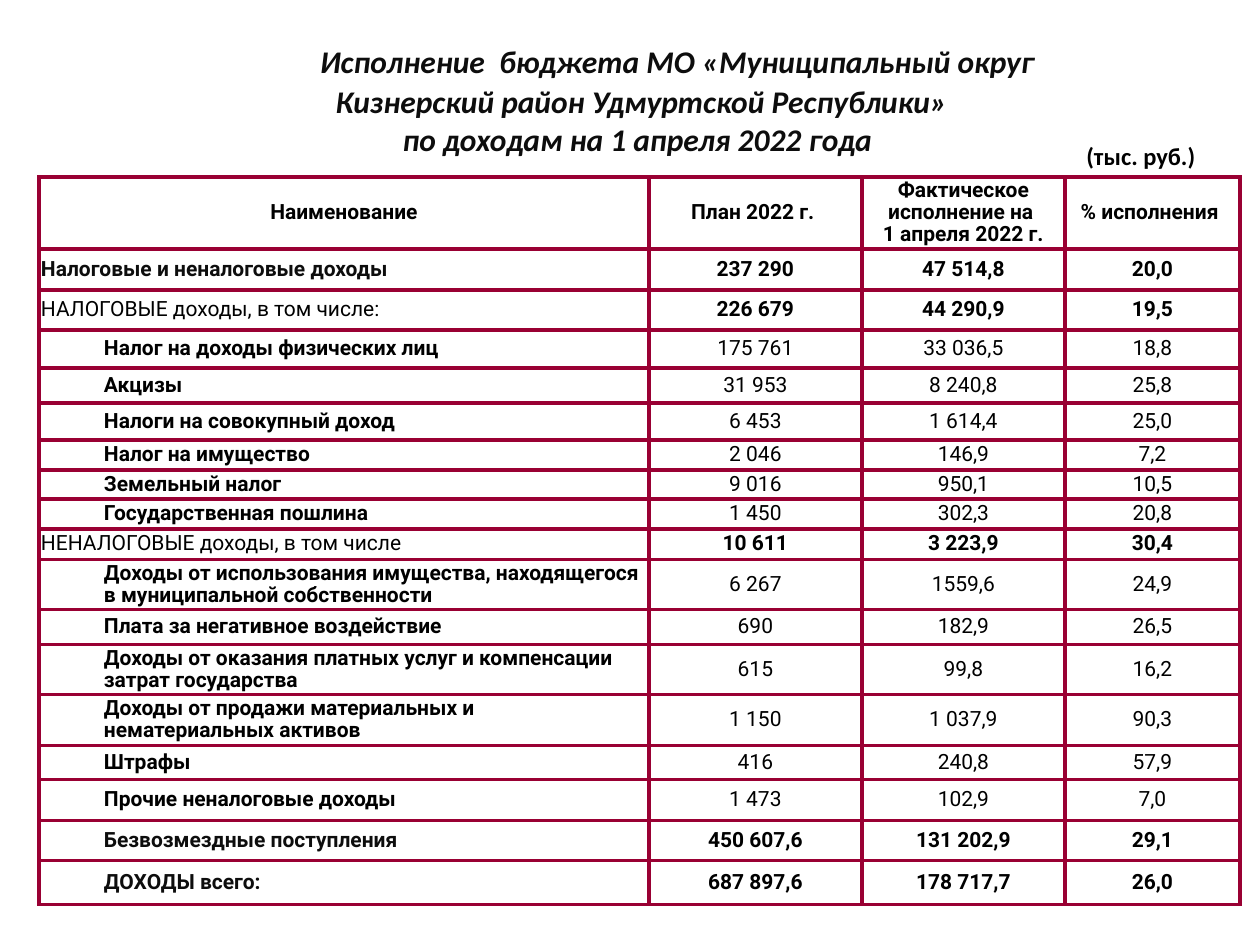
from dataclasses import dataclass

from lxml.etree import SubElement
from pptx import Presentation
from pptx.dml.color import RGBColor
from pptx.enum.text import MSO_ANCHOR as Anchor, MSO_AUTO_SIZE as AutoSize, PP_ALIGN as Align
from pptx.oxml.ns import qn
from pptx.util import Emu, Pt


@dataclass(frozen=True)
class Theme:
    ink: str = "000000"
    soft_ink: str = "0D0D0D"
    paper: str = "FFFFFF"
    border: str = "990033"
    title_font: str = "Calibri"
    table_font: str = "Roboto"
    title_size: int = 18
    unit_size: int = 14
    table_size: int = 12
    border_width: float = 2.25


theme = Theme()


def px(count):
    return Emu(round(count * 914400 / 126))


def add_span(para, text, font, size, color, bold=True, italic=False):
    span = para.add_run()
    span.text = text
    span.font.name = font
    span.font.size = Pt(size)
    span.font.bold = bold
    span.font.italic = italic
    span.font.color.rgb = RGBColor.from_string(color)


deck = Presentation()
deck.slide_width, deck.slide_height = px(1260), px(945)
page = deck.slides.add_slide(deck.slide_layouts[5])

# Title: each line with the left indent that shifts its centre
TITLE_LINES = [
    ("Исполнение  бюджета МО «Муниципальный округ", 80),
    ("Кизнерский район Удмуртской Республики»", 8),
    ("по доходам на 1 апреля 2022 года", 0),
]
title = page.shapes.title
title.left, title.top, title.width, title.height = px(64), px(26), px(1147), px(140)
frame = title.text_frame
frame.word_wrap = True
frame.auto_size = AutoSize.NONE
frame.vertical_anchor = Anchor.TOP
frame.margin_top = px(16)
for index, (line, indent) in enumerate(TITLE_LINES):
    para = frame.paragraphs[0] if index == 0 else frame.add_paragraph()
    para.alignment = Align.CENTER
    para.line_spacing = 1.0
    para.space_before = Pt(0)
    para.space_after = Pt(1.5 if index == 0 else 0)
    para._p.get_or_add_pPr().set("marL", str(px(indent)))
    add_span(para, line, theme.title_font, theme.title_size, theme.soft_ink, italic=True)

unit_box = page.shapes.add_textbox(px(1074), px(135), px(168), px(43))
unit_box.text_frame.word_wrap = True
add_span(unit_box.text_frame.paragraphs[0], "(тыс. руб.)",
         theme.title_font, theme.unit_size, theme.ink)

# Row kinds: label indent, label bold, values bold, label colour
KINDS = {
    "head": (0, True, True, theme.ink),
    "total": (0, True, True, theme.soft_ink),
    "group": (0, False, True, theme.ink),
    "item": (63, True, False, theme.ink),
    "sum": (63, True, True, theme.soft_ink),
}
COLUMN_WIDTHS = [610, 213, 203, 175]
ROWS = [
    ("head", 72, "Наименование", "План 2022 г. ",
     "Фактическое исполнение на \n1 апреля 2022 г.", "% исполнения "),
    ("total", 41, "Налоговые и неналоговые доходы", "237 290", "47 514,8", "20,0"),
    ("group", 40, "НАЛОГОВЫЕ доходы, в том числе:", "226 679", "44 290,9", "19,5"),
    ("item", 38, "Налог на доходы физических лиц", "175 761", "33 036,5", "18,8"),
    ("item", 35, "Акцизы", "31 953", "8 240,8", "25,8"),
    ("item", 37, "Налоги на совокупный доход", "6 453", "1 614,4", "25,0"),
    ("item", 30, "Налог на имущество", "2 046", "146,9", "7,2"),
    ("item", 29, "Земельный налог", "9 016", "950,1", "10,5"),
    ("item", 30, "Государственная пошлина", "1 450", "302,3", "20,8"),
    ("group", 31, "НЕНАЛОГОВЫЕ доходы, в том числе", "10 611", "3 223,9", "30,4"),
    ("item", 50, "Доходы от использования имущества, находящегося в муниципальной собственности",
     "6 267", "1559,6", "24,9"),
    ("item", 35, "Плата за негативное воздействие", "690", "182,9", "26,5"),
    ("item", 50, "Доходы от оказания платных услуг и компенсации затрат государства",
     "615", "99,8", "16,2"),
    ("item", 51, "Доходы от продажи материальных и нематериальных активов",
     "1 150", "1 037,9", "90,3"),
    ("item", 34, "Штрафы", "416", "240,8", "57,9"),
    ("item", 41, "Прочие неналоговые доходы", "1 473", "102,9", "7,0"),
    ("sum", 40, "Безвозмездные поступления", "450 607,6", "131 202,9", "29,1"),
    ("sum", 44, "ДОХОДЫ всего:", "687 897,6", "178 717,7", "26,0"),
]
table = page.shapes.add_table(
    len(ROWS), len(COLUMN_WIDTHS), px(39), px(177),
    px(sum(COLUMN_WIDTHS)), px(sum(row[1] for row in ROWS))).table
table.first_row = table.horz_banding = False
for column, width in zip(table.columns, COLUMN_WIDTHS):
    column.width = px(width)

for row_index, (kind, height, *texts) in enumerate(ROWS):
    table.rows[row_index].height = px(height)
    indent, label_bold, value_bold, label_color = KINDS[kind]
    for column_index, text in enumerate(texts):
        is_label = column_index == 0
        cell = table.cell(row_index, column_index)
        cell.vertical_anchor = Anchor.MIDDLE
        cell.margin_left = cell.margin_right = cell.margin_top = cell.margin_bottom = px(2)

        for line_index, line in enumerate(text.split("\n")):
            frame = cell.text_frame
            para = frame.paragraphs[0] if line_index == 0 else frame.add_paragraph()
            para.line_spacing = 0.9
            para.alignment = Align.LEFT if is_label and kind != "head" else Align.CENTER
            if is_label and indent:
                para.level = 1
                para._p.get_or_add_pPr().set("marL", str(px(indent)))
            add_span(para, line, theme.table_font, theme.table_size,
                     label_color if is_label else theme.ink,
                     bold=label_bold if is_label else value_bold)

        # Borders come before the fill in the cell properties
        properties = cell._tc.get_or_add_tcPr()
        for side in ("a:lnL", "a:lnR", "a:lnT", "a:lnB"):
            edge = SubElement(properties, qn(side), w=str(Pt(theme.border_width)))
            SubElement(SubElement(edge, qn("a:solidFill")), qn("a:srgbClr"), val=theme.border)
        cell.fill.solid()
        cell.fill.fore_color.rgb = RGBColor.from_string(theme.paper)

deck.save("out.pptx")
